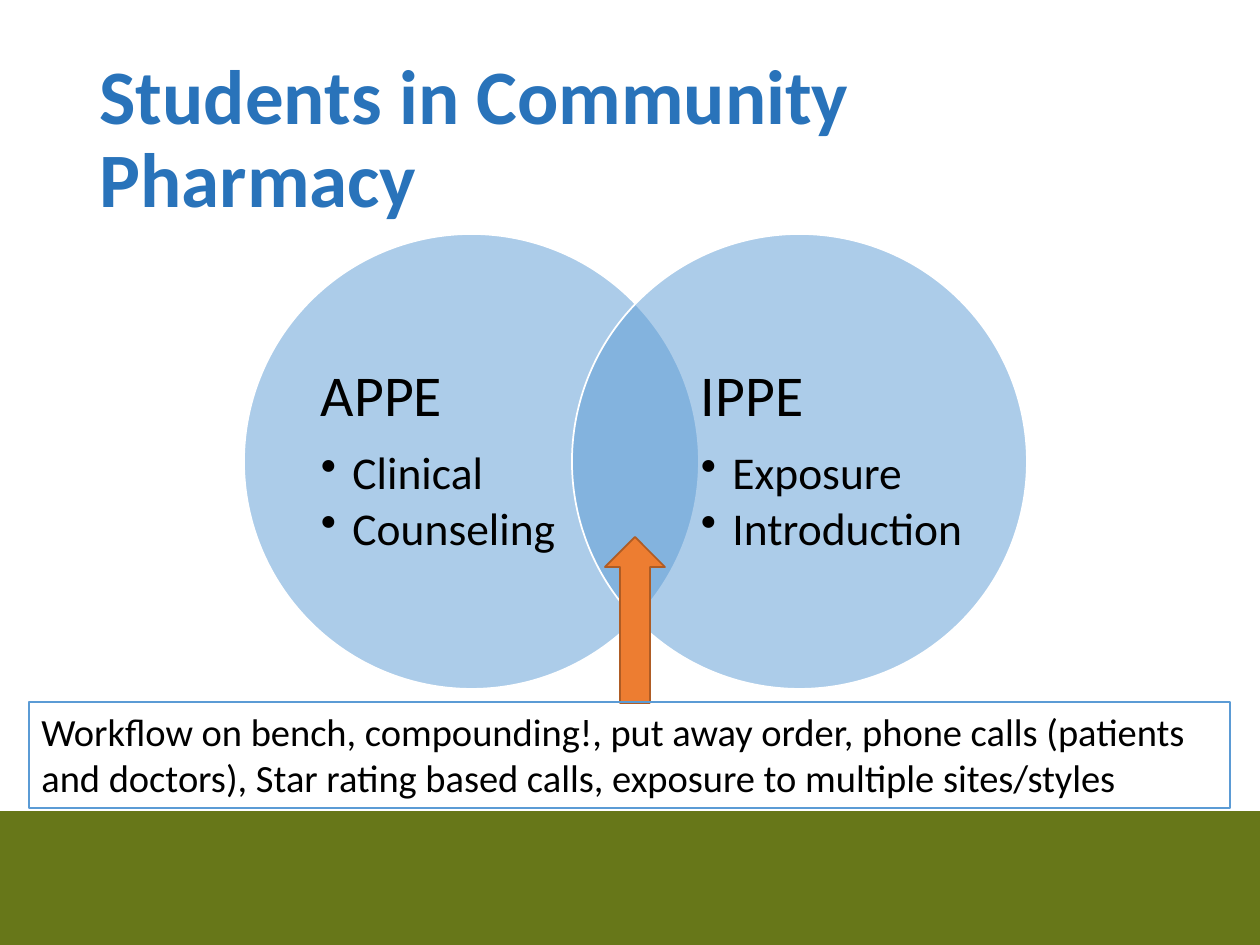
from lxml import etree
from pptx import Presentation
from pptx import util as u
from pptx.dml.color import RGBColor
from pptx.enum import shapes, text
from pptx.oxml import ns

SCALE = 914400 / 126
FONT = "Calibri"
WHITE = RGBColor(0xFF, 0xFF, 0xFF)
BLACK = RGBColor(0, 0, 0)
OLIVE = RGBColor(0x67, 0x77, 0x19)
NAVY = RGBColor(0x29, 0x73, 0xBA)
BLUE = RGBColor(0x5B, 0x9B, 0xD5)
ORANGE = RGBColor(0xED, 0x7D, 0x31)
RUST = RGBColor(0xAF, 0x5C, 0x24)
NOTE = ("Workflow on bench, compounding!, put away order, phone calls "
        "(patients and doctors), Star rating based calls, "
        "exposure to multiple sites/styles")


def px(*vals):
    return [u.Emu(round(val * SCALE)) for val in vals]


def style(para, size, color, bold=False):
    para.font.name = FONT
    para.font.size = u.Pt(size)
    para.font.color.rgb = color
    para.font.bold = bold


def add_shape(slide, kind, box, fill=None, line=None, width=1):
    shape = slide.shapes.add_shape(kind, *px(*box))
    shape.shadow.inherit = False
    if fill is None:
        shape.fill.background()
    else:
        shape.fill.solid()
        shape.fill.fore_color.rgb = fill
    if line is None:
        shape.line.fill.background()
    else:
        shape.line.color.rgb = line
        shape.line.width = u.Pt(width)
    return shape


def add_title(slide, words):
    title = slide.shapes.title
    title.left, title.top, title.width, title.height = px(87, 50, 1086, 183)
    frame = title.text_frame
    frame.text = words
    frame.auto_size = text.MSO_AUTO_SIZE.NONE
    frame.vertical_anchor = text.MSO_ANCHOR.MIDDLE
    para = frame.paragraphs[0]
    para.alignment = text.PP_ALIGN.LEFT
    para.line_spacing = 0.9
    style(para, 44, NAVY, True)


def add_circle(slide, left):
    oval = add_shape(slide, shapes.MSO_SHAPE.OVAL, (left, 234, 455, 455),
                     BLUE, WHITE)
    color = oval.fill._xPr.find(".//" + ns.qn("a:srgbClr"))
    etree.SubElement(color, ns.qn("a:alpha"), val="50000")


def add_bullet(para):
    props = para._p.get_or_add_pPr()
    props.set("marL", str(u.Inches(0.25)))
    props.set("indent", str(-u.Inches(0.25)))
    etree.SubElement(props, ns.qn("a:buChar"), char="•")


def add_list(slide, left, head, items):
    frame = slide.shapes.add_textbox(*px(left, 287, 262, 348)).text_frame
    frame.word_wrap = True
    frame.vertical_anchor = text.MSO_ANCHOR.MIDDLE
    frame.margin_left = frame.margin_right = 0
    frame.margin_top = frame.margin_bottom = 0
    frame.text = "\n".join([head, *items])
    for para in frame.paragraphs:
        para.line_spacing = 0.9
    first, *rest = frame.paragraphs
    first.space_after = u.Pt(12)
    style(first, 33, BLACK)
    for para in rest:
        para.level = 1
        para.space_after = u.Pt(4)
        add_bullet(para)
        style(para, 26, BLACK)


def add_note(slide, words):
    box = add_shape(slide, shapes.MSO_SHAPE.RECTANGLE, (29, 702, 1201, 106),
                    line=BLUE, width=0.75)
    frame = box.text_frame
    frame.word_wrap = True
    frame.auto_size = text.MSO_AUTO_SIZE.SHAPE_TO_FIT_TEXT
    frame.vertical_anchor = text.MSO_ANCHOR.TOP
    frame.text = words
    para = frame.paragraphs[0]
    para.alignment = text.PP_ALIGN.LEFT
    style(para, 22, BLACK)


def main():
    prs = Presentation()
    prs.slide_width, prs.slide_height = px(1260, 945)
    slide = prs.slides.add_slide(prs.slide_layouts[5])
    add_shape(slide, shapes.MSO_SHAPE.RECTANGLE, (0, 811, 1260, 134), OLIVE)
    add_title(slide, "Students in Community Pharmacy")
    groups = [
        (244, 321, "APPE", ["Clinical", "Counseling"]),
        (572, 701, "IPPE", ["Exposure", "Introduction"]),
    ]
    for ring, left, head, items in groups:
        add_circle(slide, ring)
        add_list(slide, left, head, items)
    add_shape(slide, shapes.MSO_SHAPE.UP_ARROW, (605, 537, 60, 166),
              ORANGE, RUST)
    add_note(slide, NOTE)
    prs.save("out.pptx")


if __name__ == "__main__":
    main()
